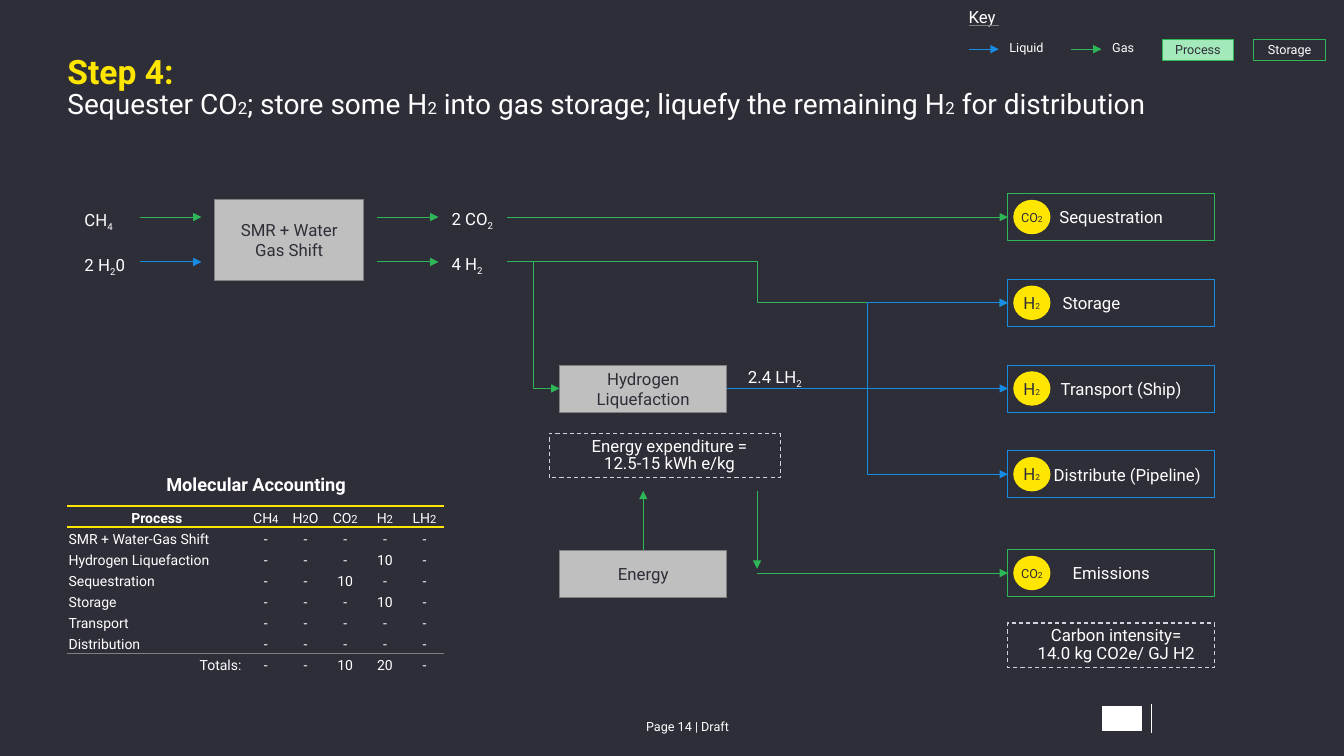
from lxml import etree
from pptx import Presentation
from pptx import util as u
from pptx.dml.color import RGBColor
from pptx.enum import dml, shapes, text
from pptx.oxml.ns import qn

INK, WHITE, YELLOW = "2E2E38", "FFFFFF", "FFE600"
GREEN, BLUE, GREY, SILVER = "2DB757", "188CE5", "808080", "BFBFBF"
LEFT, CENTER, RIGHT = text.PP_ALIGN.LEFT, text.PP_ALIGN.CENTER, text.PP_ALIGN.RIGHT
TOP, MIDDLE, BOTTOM = text.MSO_ANCHOR.TOP, text.MSO_ANCHOR.MIDDLE, text.MSO_ANCHOR.BOTTOM
RECT, OVAL = shapes.MSO_SHAPE.RECTANGLE, shapes.MSO_SHAPE.OVAL
STRAIGHT, ELBOW = shapes.MSO_CONNECTOR.STRAIGHT, shapes.MSO_CONNECTOR.ELBOW
NO_TABLE_STYLE = "{2D5ABB26-0587-4C30-8999-92F81FD0307C}"
SHAPE_INSETS = (0.25, 0.13, 0.25, 0.13)
LABEL_INSETS = (0, 0.1, 0, 0)


def color(value):
    return RGBColor.from_string(value)


def cm(*values):
    return [u.Cm(value) for value in values]


class FlowSlide:
    font = "Roboto"
    line_width = u.Pt(0.75)

    def __init__(self, deck):
        self.page = deck.slides.add_slide(deck.slide_layouts[6])
        self.page.background.fill.solid()
        self.page.background.fill.fore_color.rgb = color(INK)

    def add_words(self, para, content, size, ink=WHITE, bold=False, align=LEFT,
                  spacing=None, small=None):
        """Pieces between tildes are set small, or as subscripts without a small size."""
        for name, value in {"alignment": align, "line_spacing": spacing}.items():
            setattr(para, name, value)
        for index, piece in enumerate(content.split("~")):
            if not piece:
                continue
            lowered = index % 2
            span = para.add_run()
            span.text = piece
            points = small if lowered and small else size
            style = {"name": self.font, "size": u.Pt(points), "bold": bold}
            for name, value in style.items():
                setattr(span.font, name, value)
            span.font.color.rgb = color(ink)
            if lowered and not small:
                span.font._element.set("baseline", "-25000")

    def frame(self, holder, insets, anchor):
        sides = ("margin_left", "margin_top", "margin_right", "margin_bottom")
        style = dict(zip(sides, cm(*insets)), word_wrap=True, vertical_anchor=anchor)
        for name, value in style.items():
            setattr(holder, name, value)
        return holder

    def label(self, at, content, size=12, insets=LABEL_INSETS, **style):
        box = self.page.shapes.add_textbox(*cm(*at))
        frame = self.frame(box.text_frame, insets, TOP)
        self.add_words(frame.paragraphs[0], content, size, **style)
        return frame

    def box(self, at, lines, size=12, kind=RECT, fill=None, line=None, dashed=False,
            insets=SHAPE_INSETS, anchor=MIDDLE, align=CENTER, **style):
        box = self.page.shapes.add_shape(kind, *cm(*at))
        box.shadow.inherit = False
        if fill:
            box.fill.solid()
            box.fill.fore_color.rgb = color(fill)
        else:
            box.fill.background()
        box.line.color.rgb = color(line)
        box.line.width = self.line_width
        if dashed:
            box.line.dash_style = dml.MSO_LINE.DASH
        frame = self.frame(box.text_frame, insets, anchor)
        para = frame.paragraphs[0]
        for index, content in enumerate(lines.split("\n")):
            if index:
                para.add_line_break()
            self.add_words(para, content, size, align=align, **style)

    def line(self, start, end, ink, kind=STRAIGHT, arrow=True):
        link = self.page.shapes.add_connector(kind, *cm(*start, *end))
        link.line.color.rgb = color(ink)
        link.line.width = self.line_width
        if arrow:
            etree.SubElement(link.line._get_or_add_ln(), qn("a:tailEnd"), type="triangle")
        etree.SubElement(link._element.spPr, qn("a:effectLst"))

    def table(self, left, top, widths, heights):
        size = cm(left, top, sum(widths), sum(heights))
        table = self.page.shapes.add_table(len(heights), len(widths), *size).table
        table.first_row = table.horz_banding = False
        table._tbl.tblPr.find(qn("a:tableStyleId")).text = NO_TABLE_STYLE
        for column, width in zip(table.columns, cm(*widths)):
            column.width = width
        for row, height in zip(table.rows, cm(*heights)):
            row.height = height
        return table

    def cell(self, cell, content, size=10, anchor=BOTTOM, border=None, **style):
        self.frame(cell, (0.03, 0.03, 0.03, 0), anchor)
        self.add_words(cell.text_frame.paragraphs[0], content, size, small=8, **style)
        cell.fill.solid()
        cell.fill.fore_color.rgb = color(INK)
        if border:
            side, ink = border
            edge = etree.Element(qn("a:" + side), w=str(u.Pt(1)))
            solid = etree.SubElement(edge, qn("a:solidFill"))
            etree.SubElement(solid, qn("a:srgbClr"), val=ink)
            cell._tc.get_or_add_tcPr().insert(0, edge)


def main():
    deck = Presentation()
    deck.slide_width, deck.slide_height = cm(33.87, 19.05)
    flow = FlowSlide(deck)

    # Title
    title = flow.label((1.7, 1.45, 30.48, 1.65), "Step 4:", 24, insets=(0, 0, 0, 0),
                       ink=YELLOW, bold=True, spacing=0.85)
    flow.add_words(title.add_paragraph(), "Sequester CO~2~; store some H~2~ into gas storage; "
                   "liquefy the remaining H~2~ for distribution", 20, spacing=0.85, small=12)

    # Key
    flow.label((24.41, 0.15, 1.02, 0.53), "Key", spacing=0.85)
    flow.line((24.43, 0.64), (25.17, 0.64), GREY, arrow=False)
    for left, name, ink in ((24.41, "Liquid", BLUE), (27, "Gas", GREEN)):
        flow.line((left, 1.24), (left + 0.76, 1.24), ink)
        flow.label((left + 1.03, 0.97, 1.8, 0.43), name, 9, spacing=0.85)
    for left, name, fill, ink in ((29.29, "Process", "A4E9B9", INK),
                                  (31.6, "Storage", None, WHITE)):
        flow.box((left, 0.99, 1.8, 0.53), name, 9, fill=fill, line=GREEN, ink=ink)

    # Molecular accounting table
    processes = ["SMR + Water-Gas Shift", "Hydrogen Liquefaction", "Sequestration",
                 "Storage", "Transport", "Distribution", "Totals: "]
    gases = ["CH~4~", "H~2~O", "CO~2~", "H~2~", "LH~2~"]
    amounts = {("Hydrogen Liquefaction", "H~2~"): "10", ("Sequestration", "CO~2~"): "10",
               ("Storage", "H~2~"): "10", ("Totals: ", "CO~2~"): "10",
               ("Totals: ", "H~2~"): "20"}
    borders = {0: ("lnB", YELLOW), 1: ("lnT", YELLOW), 7: ("lnB", GREY), 8: ("lnT", GREY)}
    table = flow.table(1.7, 11.94, [4.5] + [1] * 5, [0.81] + [0.53] * 8)
    rows = [["Molecular Accounting"] + [""] * 5, ["Process"] + gases]
    rows += [[name] + [amounts.get((name, gas), "-") for gas in gases] for name in processes]
    for r, row in enumerate(rows):
        for c, content in enumerate(row):
            align = CENTER if c or r < 2 else RIGHT if r == 8 else LEFT
            flow.cell(table.cell(r, c), content, 10 if r else 13, BOTTOM if r else TOP,
                      borders.get(r), align=align, bold=r < 2 and c == 0)
    table.cell(0, 0).merge(table.cell(0, 5))

    # Process boxes
    for at, name in (((5.41, 5.03, 3.76, 2.03), "SMR + Water Gas Shift"),
                     ((14.1, 9.2, 4.22, 1.19), "Hydrogen Liquefaction"),
                     ((14.1, 13.87, 4.22, 1.19), "Energy")):
        flow.box(at, name, fill=SILVER, line=GREY, ink=INK)

    # Flows
    carbon, hydrogen, storage, ship, pipeline, emissions = 5.47, 6.6, 7.63, 9.79, 11.95, 14.44
    outlet = 25.4
    flow.line((3.53, carbon), (5.08, carbon), GREEN)
    flow.line((3.53, hydrogen), (5.08, hydrogen), BLUE)
    for level in (carbon, hydrogen):
        flow.line((9.5, level), (11.05, level), GREEN)
    flow.line((12.78, hydrogen), (14.1, ship), GREEN, ELBOW)
    flow.line((12.78, hydrogen), (outlet, storage), GREEN, ELBOW)
    flow.line((12.78, carbon), (outlet, carbon), GREEN)
    flow.line((18.31, ship), (outlet, pipeline), BLUE, ELBOW)
    flow.line((18.31, ship), (outlet, ship), BLUE)
    flow.line((18.31, ship), (outlet, storage), BLUE, ELBOW)
    flow.line((19.08, 12.37), (19.08, 14.33), GREEN)
    flow.line((16.21, 13.87), (16.21, 12.37), GREEN)
    flow.line((19.08, emissions), (outlet, emissions), GREEN)

    # Destinations with gas badges
    for level, name, gas, size, ink, align, indent in (
            (carbon, "Sequestration", "CO~2~", 9, GREEN, CENTER, 0),
            (storage, "Storage", "H~2~", 12, BLUE, LEFT, 1.13),
            (ship, "Transport (Ship)", "H~2~", 12, BLUE, CENTER, 0.5),
            (pipeline, "Distribute (Pipeline)", "H~2~", 12, BLUE, CENTER, 0.81),
            (emissions, "Emissions", "CO~2~", 9, GREEN, CENTER, 0)):
        flow.box((outlet, level - 0.59, 5.21, 1.19), name, line=ink, align=align,
                 insets=(0.25 + indent, 0.13, 0.25, 0.13))
        flow.box((25.55, level - 0.42, 0.91, 0.84), gas, size, OVAL, YELLOW, YELLOW,
                 insets=(0, 0.13, 0, 0.13), ink=INK, small=6)

    # Notes in dashed frames
    for at, lines in (((13.84, 10.92, 5.82, 1.12), "Energy expenditure =\n12.5-15 kWh e/kg"),
                      ((outlet, 15.7, 5.21, 1.12), "Carbon intensity=\n14.0 kg CO2e/ GJ H2")):
        flow.box(at, lines, line="D2D2DA", dashed=True, anchor=TOP, spacing=0.85,
                 insets=(0.38, 0.13, 0.13, 0.13))

    # Molecule labels
    for left, top, name in ((2.13, 5.21, "CH~4~"), (2.13, 6.35, "2 H~2~0"),
                            (11.38, 5.18, "2 CO~2~"), (11.38, 6.32, "4 H~2~"),
                            (18.85, 9.17, "2.4 LH~2~")):
        flow.label((left, top, 1.8, 0.53), name, spacing=0.85)

    # Footer
    flow.label((12.65, 17.98, 9.35, 0.51), "Page 14 | Draft", 9, SHAPE_INSETS, align=CENTER)
    flow.box((27.79, 17.8, 0.97, 0.6), "", fill=WHITE, line=WHITE)
    flow.line((29.01, 17.75), (29.01, 18.47), WHITE, arrow=False)

    deck.save("out.pptx")


if __name__ == "__main__":
    main()
